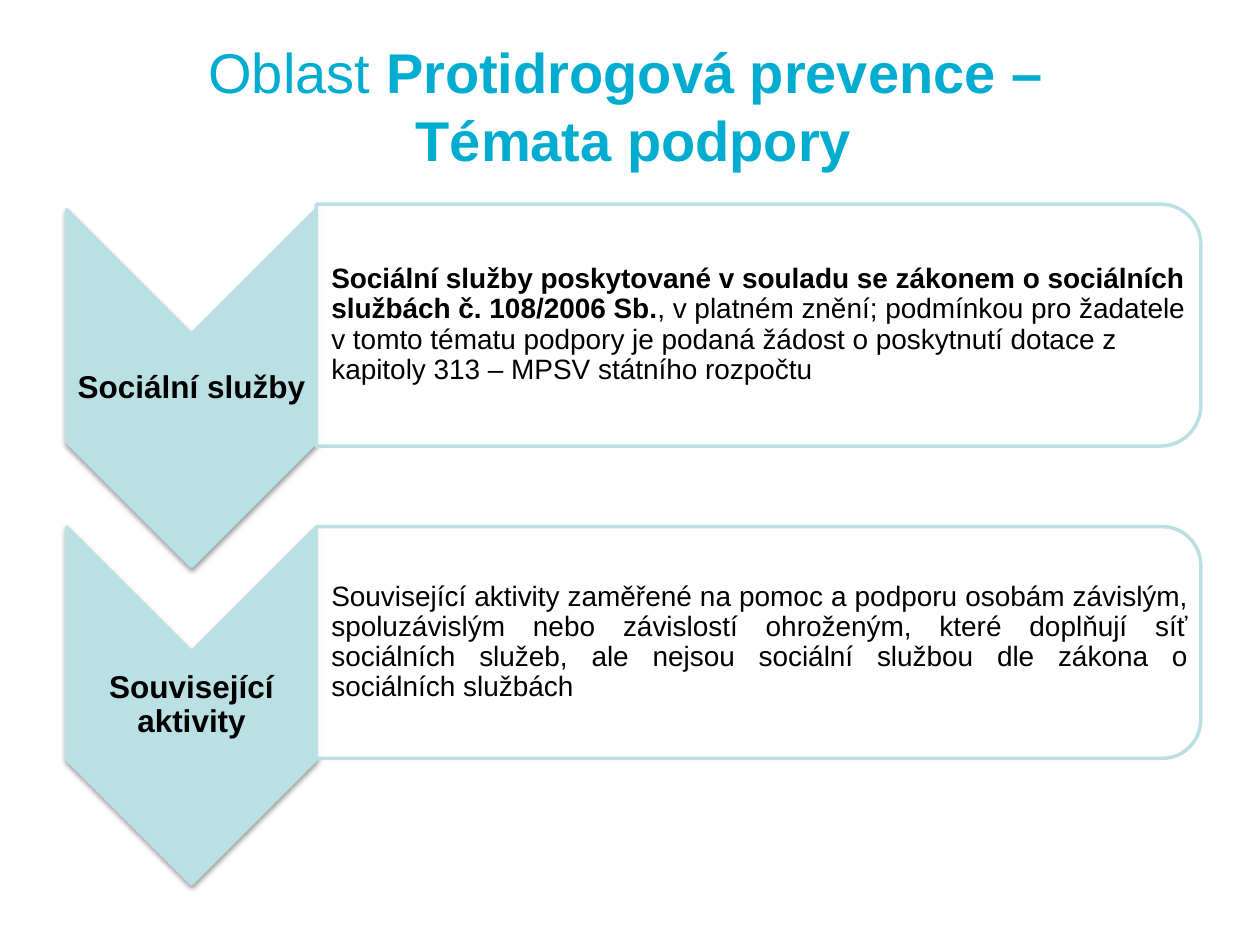
import pptx
import pptx.util
import pptx.dml.color
import pptx.enum.shapes
import pptx.enum.text
import pptx.oxml.ns
from lxml import etree

Inches, Pt = pptx.util.Inches, pptx.util.Pt
SHAPE = pptx.enum.shapes.MSO_SHAPE
ALIGN = pptx.enum.text.PP_ALIGN
MIDDLE = pptx.enum.text.MSO_ANCHOR.MIDDLE
qn = pptx.oxml.ns.qn

TITLE = [("Oblast ", False), ("Protidrogová prevence – \vTémata podpory", True)]
ROWS = [
    {"label": "Sociální služby", "tall": 1.92, "align": ALIGN.LEFT, "body": [
        ("Sociální služby poskytované v souladu se zákonem o sociálních "
         "službách č. 108/2006 Sb.", True),
        (", v platném znění; podmínkou pro žadatele v tomto tématu podpory "
         "je podaná žádost o poskytnutí dotace z kapitoly 313 – MPSV "
         "státního rozpočtu", False)]},
    {"label": "Související aktivity", "tall": 1.84, "align": ALIGN.JUSTIFY, "body": [
        ("Související aktivity zaměřené na pomoc a podporu osobám závislým, "
         "spoluzávislým nebo závislostí ohroženým, které doplňují síť "
         "sociálních služeb, ale nejsou sociální službou dle zákona "
         "o sociálních službách", False)]},
]
TEAL, BLUE, BLACK, WHITE = "BBE0E3", "00ADD0", "000000", "FFFFFF"
LEFT, WIDE, LONG = 0.53, 1.98, 2.83      # arrow column
BAR, SPAN = LEFT + WIDE, 7.02            # text bars
MID, STEP = 2.58, 2.52                   # first bar's centre, row pitch
DROP = 0.5                               # arrow centre below bar centre


def color(code):
    return pptx.dml.color.RGBColor.from_string(code)


def write(frame, runs, size, code, align, **form):
    """Fill a text frame with one paragraph of (text, bold) runs."""
    frame.word_wrap = True
    frame.vertical_anchor = MIDDLE
    para = frame.paragraphs[0]
    para.alignment = align
    for name, value in form.items():
        setattr(para, name, value)
    for text, bold in runs:
        # add_run keeps one format per piece; \v becomes a line break
        for i, part in enumerate(text.split("\v")):
            if i:
                para.add_line_break()
            run = para.add_run()
            run.text = part
            look = {"name": "Arial", "size": Pt(size), "bold": bold}
            for name, value in look.items():
                setattr(run.font, name, value)
            run.font.color.rgb = color(code)


def turned(shapes, kind, mid_x, mid_y, wide, tall, fill):
    """Add a shape turned by 90 degrees; wide and tall are as seen."""
    shape = shapes.add_shape(kind, Inches(mid_x - tall / 2), Inches(mid_y - wide / 2),
                             Inches(tall), Inches(wide))
    shape.rotation = 90
    shape.shadow.inherit = False
    shape.fill.solid()
    shape.fill.fore_color.rgb = color(fill)
    shape.line.color.rgb = color(TEAL)
    shape.line.width = Pt(2)
    return shape


def alpha(node, part):
    etree.SubElement(node, qn("a:alpha"), val=str(part * 1000))


def shade(shape):
    """Give the shape a soft shadow below."""
    effects = shape._element.spPr.find(qn("a:effectLst"))
    outer = etree.SubElement(effects, qn("a:outerShdw"), blurRad=str(Pt(3.1)),
                             dist=str(Pt(1.6)), dir="5400000", rotWithShape="0")
    alpha(etree.SubElement(outer, qn("a:srgbClr"), val=BLACK), 38)


def label(shapes, left, mid, wide, tall, inset, *text, **form):
    box = shapes.add_textbox(Inches(left), Inches(mid - tall / 2),
                             Inches(wide), Inches(tall))
    frame = box.text_frame
    for side in ("left", "right", "top", "bottom"):
        setattr(frame, "margin_" + side, Inches(0.01))
    frame.margin_left = Inches(inset)
    write(frame, *text, line_spacing=0.9, **form)


def main():
    deck = pptx.Presentation()
    deck.slide_width, deck.slide_height = Inches(10), Inches(7.5)
    slide = deck.slides.add_slide(deck.slide_layouts[5])
    title = slide.shapes.title
    place = {"left": 0.28, "top": 0.21, "width": 9.5, "height": 1.25}
    for name, value in place.items():
        setattr(title, name, Inches(value))
    write(title.text_frame, TITLE, 32, BLUE, ALIGN.CENTER)

    shapes = slide.shapes
    for i, row in enumerate(ROWS):
        mid, tall = MID + i * STEP, row["tall"]
        arrow = turned(shapes, SHAPE.CHEVRON, LEFT + WIDE / 2, mid + DROP,
                       WIDE, LONG, TEAL)
        shade(arrow)
        label(shapes, LEFT, mid + DROP, WIDE, 0.85, 0.01,
              [(row["label"], True)], 18, BLACK, ALIGN.CENTER)
        bar = turned(shapes, SHAPE.ROUND_2_SAME_RECTANGLE, BAR + SPAN / 2, mid,
                     SPAN, tall, WHITE)
        alpha(bar._element.spPr.find(qn("a:solidFill"))[0], 90)
        label(shapes, BAR, mid, 6.93, tall - 0.19, 0.12,
              row["body"], 16, BLACK, row["align"],
              space_after=Pt(2.4 * i))
    deck.save("out.pptx")


if __name__ == "__main__":
    main()
